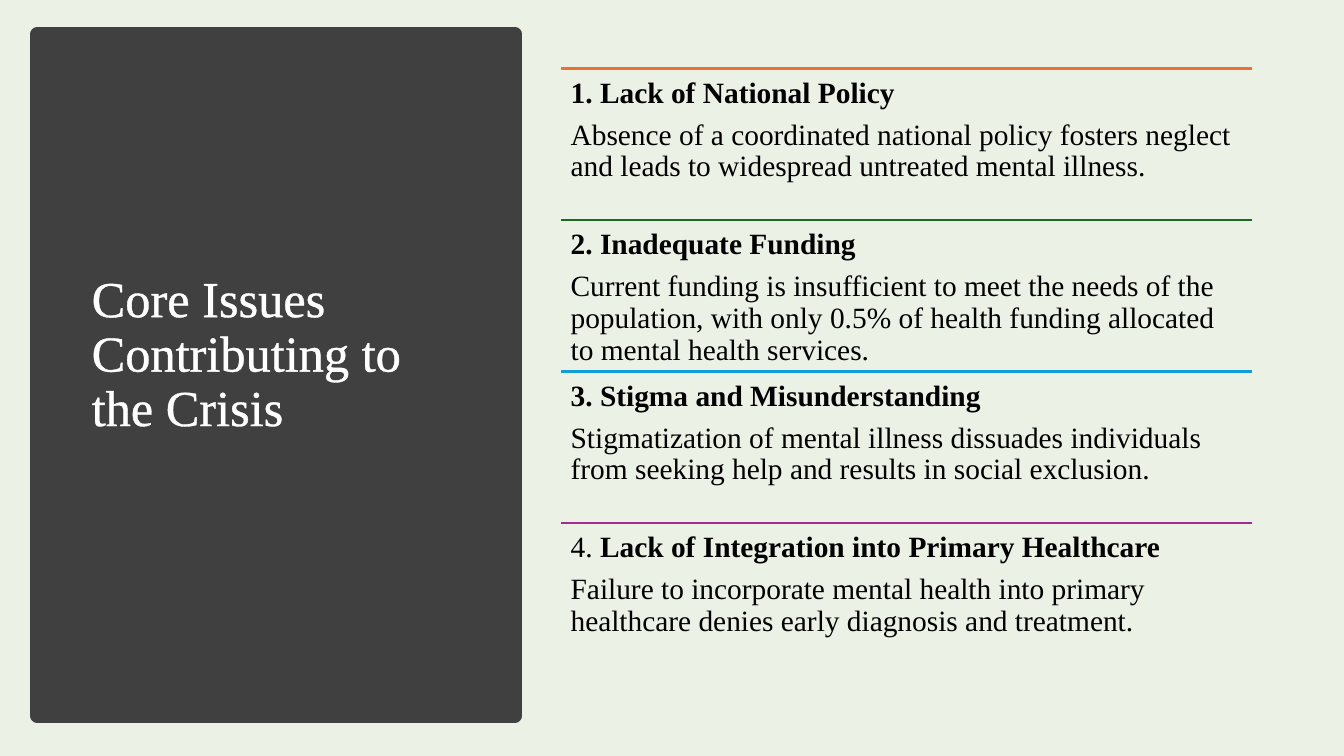
"""Build the slide on the core issues contributing to the mental health crisis."""
from dataclasses import dataclass

from lxml.etree import SubElement
from pptx import Presentation
from pptx.dml.color import RGBColor
from pptx.enum.shapes import MSO_CONNECTOR, MSO_SHAPE
from pptx.enum.text import MSO_ANCHOR, MSO_AUTO_SIZE, PP_ALIGN
from pptx.oxml import parse_xml
from pptx.oxml.ns import qn
from pptx.slide import Slide
from pptx.text.text import _Paragraph as Paragraph
from pptx.util import Pt


@dataclass(frozen=True)
class Theme:
    font: str = "Times New Roman"
    background: str = "ECF1E6"
    panel: str = "404040"
    title: str = "FFFFFF"
    body: str = "000000"
    title_size: float = 36
    body_size: float = 21
    line_spacing: float = 0.9
    space_after: float = 7.4
    title_outline: float = 1.75
    panel_border: float = 10
    rule_width: float = 1.5


@dataclass(frozen=True)
class Issue:
    heading: str
    explanation: str
    accent: str
    plain_number: str = ""


THEME = Theme()
ISSUES_LEFT, ISSUES_TOP = 401, 48.9
ISSUE_WIDTH, ISSUE_HEIGHT = 493.2, 108.24
ISSUE_INSET = 6.6

ISSUES = [
    Issue(
        "1. Lack of National Policy",
        "Absence of a coordinated national policy fosters neglect and leads to "
        "widespread untreated mental illness.",
        "E97132",
    ),
    Issue(
        "2. Inadequate Funding",
        "Current funding is insufficient to meet the needs of the population, with only "
        "0.5% of health funding allocated to mental health services.",
        "196B24",
    ),
    Issue(
        "3. Stigma and Misunderstanding",
        "Stigmatization of mental illness dissuades individuals from seeking help and "
        "results in social exclusion.",
        "0F9ED5",
    ),
    Issue(
        "Lack of Integration into Primary Healthcare",
        "Failure to incorporate mental health into primary healthcare denies early "
        "diagnosis and treatment.",
        "A02B93",
        plain_number="4. ",
    ),
]


def color(value: str) -> RGBColor:
    return RGBColor.from_string(value)


def format_runs(paragraph: Paragraph, size: float, ink: str) -> None:
    paragraph.line_spacing = THEME.line_spacing
    for run in paragraph.runs:
        run.font.name = THEME.font
        run.font.size = Pt(size)
        run.font.color.rgb = color(ink)


def draw_panel(slide: Slide) -> None:
    panel = slide.shapes.add_shape(
        MSO_SHAPE.RECTANGLE, Pt(26.64), Pt(24.48), Pt(341.28), Pt(486.72)
    )
    panel.shadow.inherit = False
    panel.fill.solid()
    panel.fill.fore_color.rgb = color(THEME.panel)
    panel.line.color.rgb = color(THEME.panel)
    panel.line.width = Pt(THEME.panel_border)
    slide.shapes.element.insert(2, panel.element)


def draw_title(slide: Slide, wording: str) -> None:
    title = slide.shapes.title
    title.left, title.top = Pt(58.32), Pt(58.32)
    title.width, title.height = Pt(273.6), Pt(390.96)
    frame = title.text_frame
    frame.text = wording
    frame.word_wrap = True
    frame.auto_size = MSO_AUTO_SIZE.NONE
    frame.vertical_anchor = MSO_ANCHOR.MIDDLE
    paragraph = frame.paragraphs[0]
    paragraph.alignment = PP_ALIGN.LEFT
    format_runs(paragraph, THEME.title_size, THEME.title)
    outline = parse_xml(
        '<a:ln xmlns:a="http://schemas.openxmlformats.org/drawingml/2006/main" '
        f'w="{Pt(THEME.title_outline)}"><a:solidFill>'
        f'<a:srgbClr val="{THEME.title}"/></a:solidFill></a:ln>'
    )
    paragraph.runs[0].font._element.insert(0, outline)


def draw_issue(slide: Slide, issue: Issue, top: float) -> None:
    rule = slide.shapes.add_connector(
        MSO_CONNECTOR.STRAIGHT,
        Pt(ISSUES_LEFT), Pt(top), Pt(ISSUES_LEFT + ISSUE_WIDTH), Pt(top),
    )
    rule.line.color.rgb = color(issue.accent)
    rule.line.width = Pt(THEME.rule_width)
    SubElement(rule.element.spPr, qn("a:effectLst"))

    description = slide.shapes.add_textbox(
        Pt(ISSUES_LEFT), Pt(top), Pt(ISSUE_WIDTH), Pt(ISSUE_HEIGHT)
    )
    frame = description.text_frame
    frame.word_wrap = True
    frame.margin_left = frame.margin_right = Pt(ISSUE_INSET)
    frame.margin_top = frame.margin_bottom = Pt(ISSUE_INSET)
    frame.text = f"{issue.plain_number}\n{issue.explanation}"
    heading = frame.paragraphs[0]
    heading_run = heading.add_run()
    heading_run.text = issue.heading
    heading_run.font.bold = True
    for paragraph in frame.paragraphs:
        paragraph.space_after = Pt(THEME.space_after)
        format_runs(paragraph, THEME.body_size, THEME.body)


def main() -> None:
    presentation = Presentation()
    presentation.slide_width, presentation.slide_height = Pt(960), Pt(540)
    slide = presentation.slides.add_slide(presentation.slide_layouts[5])
    slide.background.fill.solid()
    slide.background.fill.fore_color.rgb = color(THEME.background)
    draw_panel(slide)
    draw_title(slide, "Core Issues Contributing to the Crisis")
    for row, issue in enumerate(ISSUES):
        draw_issue(slide, issue, ISSUES_TOP + row * ISSUE_HEIGHT)
    presentation.save("out.pptx")


if __name__ == "__main__":
    main()
